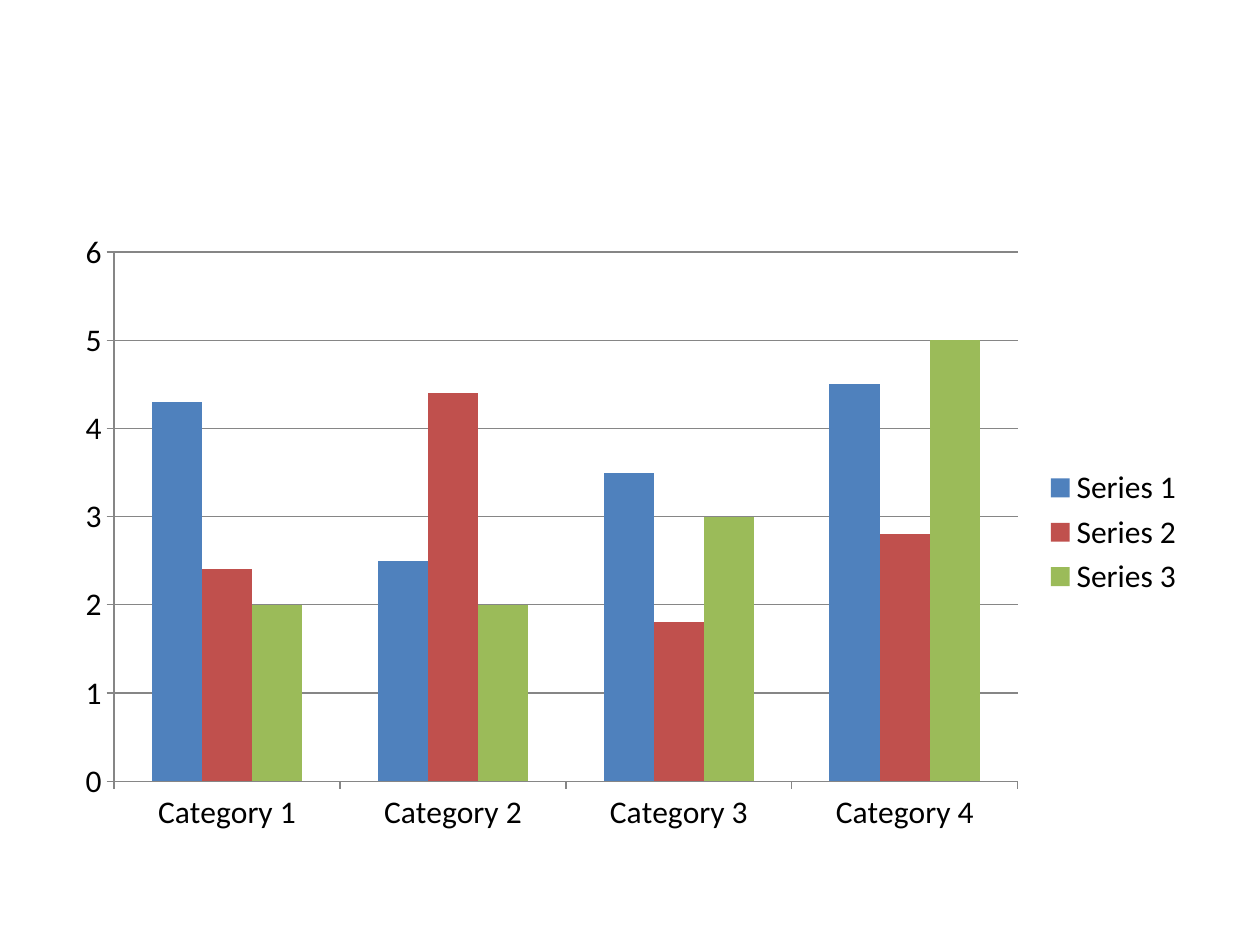
from dataclasses import dataclass

from pptx import Presentation
from pptx.chart.axis import CategoryAxis, ValueAxis
from pptx.chart.data import CategoryChartData
from pptx.dml.color import RGBColor
from pptx.enum.chart import XL_CHART_TYPE, XL_LEGEND_POSITION, XL_TICK_MARK
from pptx.slide import Slide
from pptx.util import Inches, Pt


@dataclass(frozen=True)
class Theme:
    font: str = "Calibri"
    text_size: float = 18
    line_width: float = 0.75
    text: RGBColor = RGBColor(0x00, 0x00, 0x00)
    line: RGBColor = RGBColor(0x86, 0x86, 0x86)


@dataclass(frozen=True)
class Series:
    name: str
    values: tuple[float, ...]
    color: RGBColor


THEME = Theme()
CATEGORIES = [f"Category {number}" for number in range(1, 5)]
SERIES = (
    Series("Series 1", (4.3, 2.5, 3.5, 4.5), RGBColor(0x4F, 0x81, 0xBD)),
    Series("Series 2", (2.4, 4.4, 1.8, 2.8), RGBColor(0xC0, 0x50, 0x4D)),
    Series("Series 3", (2, 2, 3, 5), RGBColor(0x9B, 0xBB, 0x59)),
)


def style_axis(axis: CategoryAxis | ValueAxis, gridlines: bool) -> None:
    axis.major_tick_mark = XL_TICK_MARK.OUTSIDE
    axis.minor_tick_mark = XL_TICK_MARK.NONE
    axis.has_major_gridlines = gridlines
    lines = [axis.format.line]
    if gridlines:
        lines.append(axis.major_gridlines.format.line)
    for line in lines:
        line.width = Pt(THEME.line_width)
        line.color.rgb = THEME.line


def add_column_chart(page: Slide) -> None:
    data = CategoryChartData()
    data.categories = CATEGORIES
    for series in SERIES:
        data.add_series(series.name, series.values)

    chart = page.shapes.add_chart(
        XL_CHART_TYPE.COLUMN_CLUSTERED,
        Inches(0.5), Inches(1.75), Inches(9), Inches(4.95), data,
    ).chart
    chart.has_title = False
    chart.font.name = THEME.font
    chart.font.size = Pt(THEME.text_size)
    chart.font.color.rgb = THEME.text

    chart.has_legend = True
    chart.legend.position = XL_LEGEND_POSITION.RIGHT
    chart.legend.include_in_layout = False

    style_axis(chart.category_axis, gridlines=False)
    style_axis(chart.value_axis, gridlines=True)
    chart.value_axis.minimum_scale = 0
    chart.value_axis.maximum_scale = 6
    chart.value_axis.major_unit = 1

    plot = chart.plots[0]
    plot.vary_by_categories = False
    plot.gap_width = 150
    plot.overlap = 0
    for columns, series in zip(plot.series, SERIES):
        columns.format.fill.solid()
        columns.format.fill.fore_color.rgb = series.color


def main() -> None:
    deck = Presentation()
    deck.slide_width = Inches(10)
    deck.slide_height = Inches(7.5)
    page = deck.slides.add_slide(deck.slide_layouts[6])
    add_column_chart(page)
    deck.save("out.pptx")


if __name__ == "__main__":
    main()
